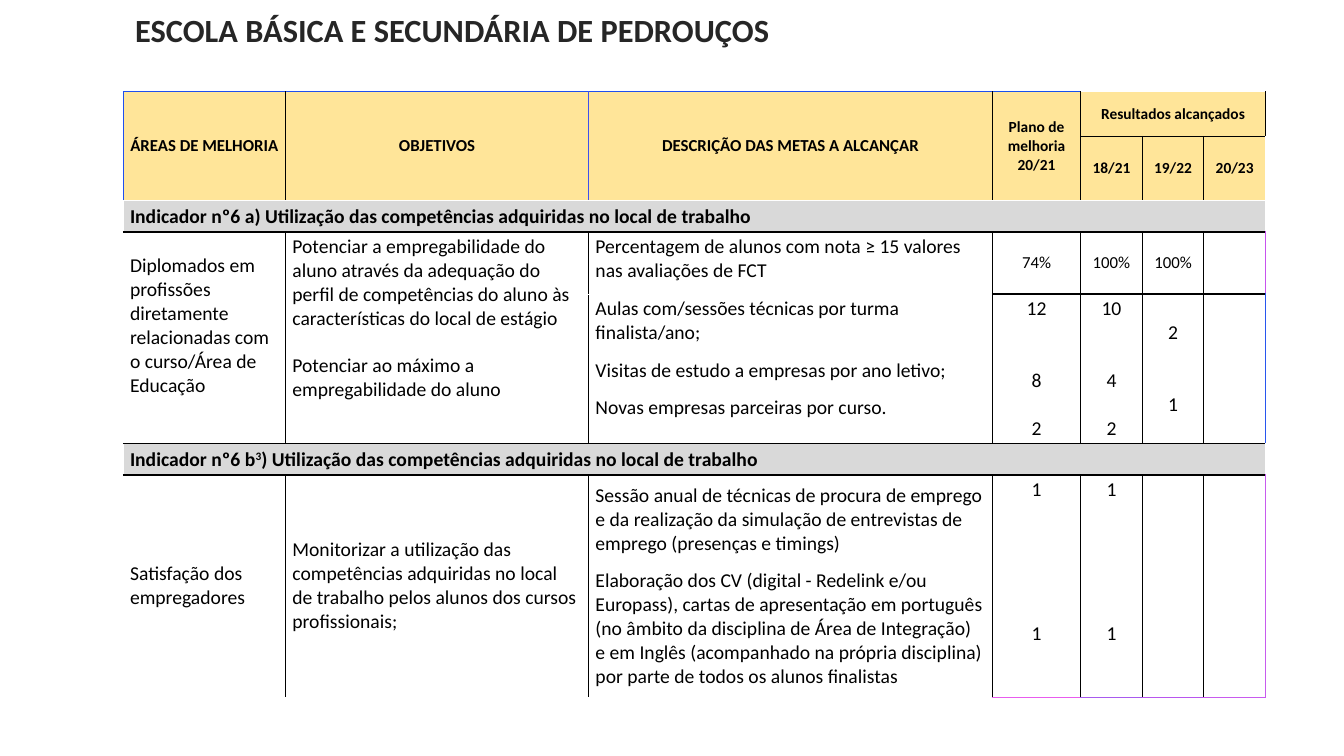
from lxml import etree
from pptx import Presentation
from pptx.dml.color import RGBColor
from pptx.enum.text import MSO_ANCHOR, MSO_AUTO_SIZE, PP_ALIGN
from pptx.oxml.ns import qn
from pptx.util import Pt

LEFT, CENTER = PP_ALIGN.LEFT, PP_ALIGN.CENTER
TOP, MIDDLE, BOTTOM = MSO_ANCHOR.TOP, MSO_ANCHOR.MIDDLE, MSO_ANCHOR.BOTTOM
NO_AUTOFIT = MSO_AUTO_SIZE.NONE
TITLE_ONLY = 5

BLACK, WHITE = "000000", "FFFFFF"
GOLD, GREY = "FFE599", "D9D9D9"
LINE = 17.1  # height of one 14 pt text line
SMALL_GAP = 9.8

COLUMNS = [116, 216.5, 288.5, 63, 44, 44, 44]
ROWS = [32, 45.7, 22.5, 44.3, 106.8, 22.5, 158.6]

# Each entry: row, column, (row span, column span), paragraphs, format
HEADER = dict(fill=GOLD, bold=True, align=CENTER, anchor=MIDDLE)
BAND = dict(fill=GREY, bold=True, anchor=BOTTOM)
NUMBER = dict(align=CENTER, anchor=MIDDLE)
INDICATOR = ") Utilização das competências adquiridas no local de trabalho"
CELLS = [
    (0, 0, (2, 1), ["ÁREAS DE MELHORIA"], dict(HEADER, size=12)),
    (0, 1, (2, 1), ["OBJETIVOS"], dict(HEADER, size=12)),
    (0, 2, (2, 1), ["DESCRIÇÃO DAS METAS A ALCANÇAR"], dict(HEADER, size=12)),
    (0, 3, (2, 1), ["Plano de melhoria 20/21"], dict(HEADER, size=11)),
    (0, 4, (1, 3), ["Resultados alcançados"], dict(HEADER, size=11)),
    (1, 4, (1, 1), ["18/21"], dict(HEADER, size=11)),
    (1, 5, (1, 1), ["19/22"], dict(HEADER, size=11)),
    (1, 6, (1, 1), ["20/23"], dict(HEADER, size=11)),
    (2, 0, (1, 7), ["Indicador nº6 a" + INDICATOR], BAND),
    (3, 0, (2, 1), ["Diplomados em profissões diretamente relacionadas com o "
                    "curso/Área de Educação"],
     dict(anchor=MIDDLE, bottom=2.2 + LINE)),
    (3, 1, (2, 1), ["Potenciar a empregabilidade do aluno através da adequação "
                    "do perfil de competências do aluno às características do "
                    "local de estágio",
                    "Potenciar ao máximo a empregabilidade do aluno"],
     dict(gaps=[LINE])),
    (3, 2, (1, 1), ["Percentagem de alunos com nota ≥ 15 valores nas avaliações "
                    "de FCT"], {}),
    (3, 3, (1, 1), ["74%"], dict(NUMBER, size=12)),
    (3, 4, (1, 1), ["100%"], dict(NUMBER, size=12)),
    (3, 5, (1, 1), ["100%"], dict(NUMBER, size=12)),
    (4, 2, (1, 1), ["Aulas com/sessões técnicas por turma finalista/ano;",
                    "Visitas de estudo a empresas por ano letivo;",
                    "Novas empresas parceiras por curso."],
     dict(gaps=[SMALL_GAP, SMALL_GAP])),
    (4, 3, (1, 1), ["12", "8", "2"], dict(NUMBER, gaps=[2 * LINE, LINE])),
    (4, 4, (1, 1), ["10", "4", "2"], dict(NUMBER, gaps=[2 * LINE, LINE])),
    (4, 5, (1, 1), ["2", "1"], dict(NUMBER, gaps=[2 * LINE])),
    (5, 0, (1, 7), [["Indicador nº6 b", ("3", 30), INDICATOR]], BAND),
    (6, 0, (1, 1), ["Satisfação dos empregadores"], dict(anchor=MIDDLE)),
    (6, 1, (1, 1), ["Monitorizar a utilização das competências adquiridas no "
                    "local de trabalho pelos alunos dos cursos profissionais;"],
     dict(anchor=MIDDLE)),
    (6, 2, (1, 1), ["Sessão anual de técnicas de procura de emprego e da "
                    "realização da simulação de entrevistas de emprego "
                    "(presenças e timings)",
                    "Elaboração dos CV (digital - Redelink e/ou Europass), "
                    "cartas de apresentação em português (no âmbito da "
                    "disciplina de Área de Integração) e em Inglês (acompanhado "
                    "na própria disciplina) por parte de todos os alunos "
                    "finalistas"],
     dict(anchor=MIDDLE, gaps=[SMALL_GAP])),
    (6, 3, (1, 1), ["1", "1"], dict(align=CENTER, gaps=[5 * LINE])),
    (6, 4, (1, 1), ["1", "1"], dict(align=CENTER, gaps=[5 * LINE])),
]

# Thin edges that differ from the black grid: side, rows, columns, colour
THIN_EDGES = [
    ("L", [0, 1], [0], "204FEE"), ("T", [0], [0, 1, 2], "204FEE"),
    ("T", [0], [3], "1851EE"), ("T", [0], [4, 5, 6], WHITE),
    ("R", [0, 1], [1], "4050EE"), ("L", [0, 1], [2], "4050EE"),
    ("B", [1], range(7), WHITE), ("T", [2], range(7), WHITE),
    ("B", [0], range(4), WHITE),
    ("L", range(2, 7), [0], WHITE), ("R", [0, 1, 2, 5], [6], WHITE),
    ("R", [2, 5], [0], WHITE),
    ("B", [3], [2], WHITE), ("T", [4], [2], WHITE),
    ("R", [3], [6], "C852EE"), ("R", [4], [6], "2856EE"),
    ("R", [6], [6], "C85BEE"), ("B", [6], [0, 1, 2], WHITE),
    ("B", [6], [3], "E85CEE"), ("B", [6], [4], "A85AEE"),
    ("B", [6], [5], "B856EE"), ("B", [6], [6], "C85BEE"),
]


def colour(value):
    return RGBColor.from_string(value)


class SlideBuilder:
    font = "Calibri"

    def __init__(self, presentation):
        layout = presentation.slide_layouts[TITLE_ONLY]
        self.slide = presentation.slides.add_slide(layout)

    def add_text(self, frame, paragraphs, size=14, bold=False, ink=BLACK,
                 align=LEFT, gaps=()):
        """Fill a frame; a list holds runs, a tuple a run and its baseline."""
        frame.word_wrap = True
        for index, content in enumerate(paragraphs):
            paragraph = frame.add_paragraph() if index else frame.paragraphs[0]
            paragraph.alignment = align
            if index:
                paragraph.space_before = Pt(gaps[index - 1])
            for part in [content] if isinstance(content, str) else content:
                text, baseline = (part, 0) if isinstance(part, str) else part
                run = paragraph.add_run()
                run.text = text
                run.font.name, run.font.size = self.font, Pt(size)
                run.font.bold = bold
                run.font.color.rgb = colour(ink)
                if baseline:
                    properties = run._r.get_or_add_rPr()
                    properties.set("baseline", str(baseline * 1000))

    def title(self, text, left, top, width, height, **style):
        shape = self.slide.shapes.title
        shape.left, shape.top = Pt(left), Pt(top)
        shape.width, shape.height = Pt(width), Pt(height)
        frame = shape.text_frame
        frame.auto_size = NO_AUTOFIT
        frame.vertical_anchor = MIDDLE
        self.add_text(frame, [text], **style)

    def table(self, left, top, columns, rows):
        shape = self.slide.shapes.add_table(
            len(rows), len(columns), Pt(left), Pt(top),
            Pt(sum(columns)), Pt(sum(rows)))
        table = shape.table
        table.first_row = table.horz_banding = False
        for column, width in zip(table.columns, columns):
            column.width = Pt(width)
        for row, height in zip(table.rows, rows):
            row.height = Pt(height)
        return table

    def cell_border(self, cell, side, value, width):
        properties = cell._tc.get_or_add_tcPr()
        line = etree.SubElement(properties, qn("a:ln" + side), w=str(Pt(width)))
        fill = etree.SubElement(line, qn("a:solidFill"))
        etree.SubElement(fill, qn("a:srgbClr"), val=value)

    def grid(self, table, thin_edges):
        thin = {(side, row, column): value
                for side, rows, columns, value in thin_edges
                for row in rows for column in columns}
        for row in range(len(table.rows)):
            for column in range(len(table.columns)):
                cell = table.cell(row, column)
                for side in "LRTB":
                    value = thin.get((side, row, column))
                    self.cell_border(cell, side, value or BLACK,
                                     0.6 if value else 1)
                cell.fill.background()

    def cell(self, table, row, column, span, paragraphs, fill=None, anchor=TOP,
             bottom=2.2, **style):
        cell = table.cell(row, column)
        if span != (1, 1):
            cell.merge(table.cell(row + span[0] - 1, column + span[1] - 1))
        cell.margin_left = cell.margin_right = Pt(4.9)
        cell.margin_top, cell.margin_bottom = Pt(2.2), Pt(bottom)
        cell.vertical_anchor = anchor
        if fill:
            cell.fill.solid()
            cell.fill.fore_color.rgb = colour(fill)
        self.add_text(cell.text_frame, paragraphs, **style)


def main():
    presentation = Presentation()
    presentation.slide_width, presentation.slide_height = Pt(960), Pt(540)
    builder = SlideBuilder(presentation)

    # Heading
    builder.title("ESCOLA BÁSICA E SECUNDÁRIA DE PEDROUÇOS", 89.3, 4, 600, 34.6,
                  size=23.1, bold=True, ink="262626")

    # Improvement plan
    table = builder.table(88, 65.5, COLUMNS, ROWS)
    builder.grid(table, THIN_EDGES)
    for row, column, span, paragraphs, style in CELLS:
        builder.cell(table, row, column, span, paragraphs, **style)

    presentation.save("out.pptx")


if __name__ == "__main__":
    main()
